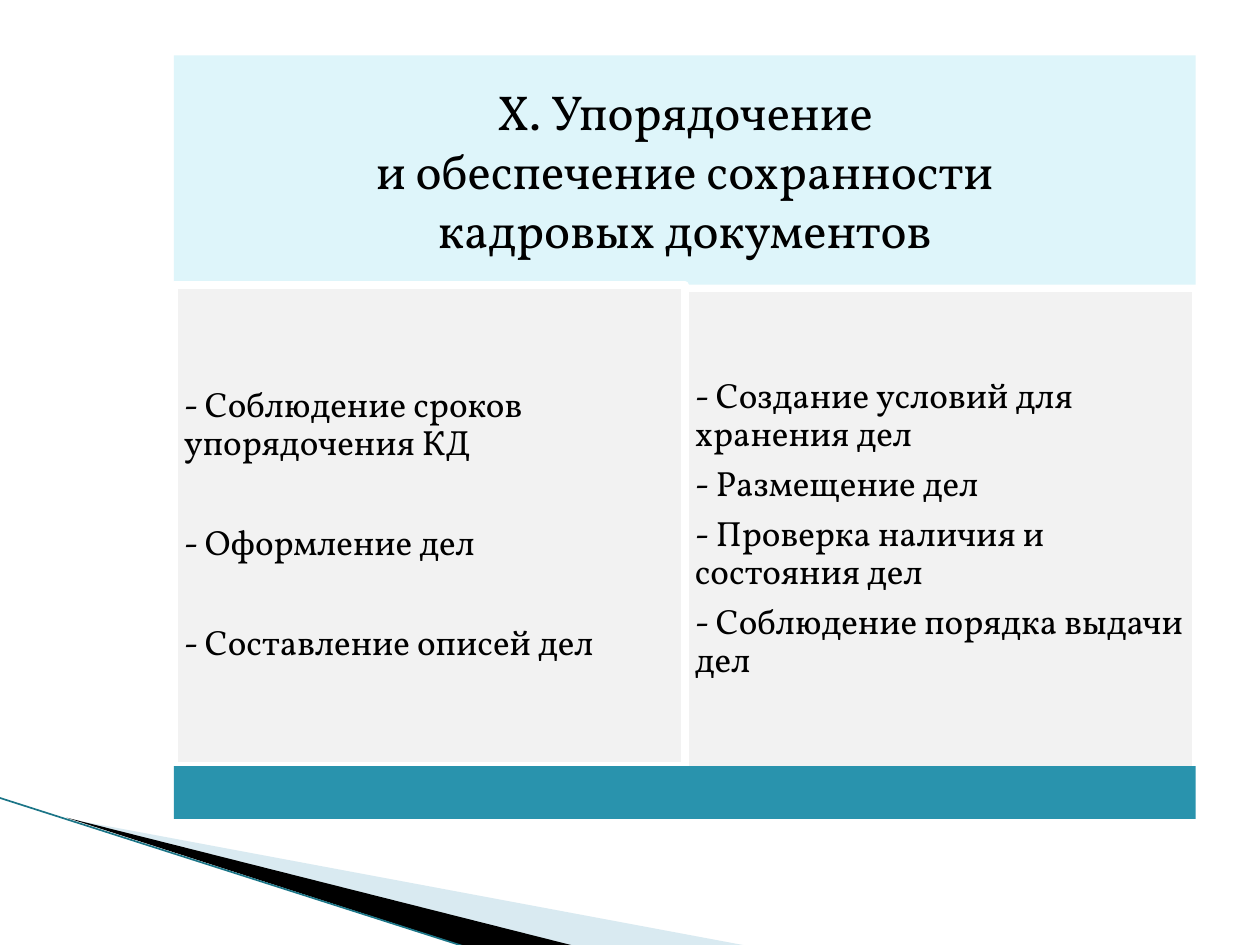
from lxml.etree import SubElement
from pptx import Presentation
from pptx.dml.color import RGBColor
from pptx.enum.shapes import MSO_CONNECTOR, MSO_SHAPE
from pptx.enum.text import MSO_ANCHOR, PP_ALIGN
from pptx.oxml.ns import qn
from pptx.util import Inches, Pt

COLORS = {
    "header": "DEF5FA",
    "panel": "F2F2F2",
    "footer": "2993AD",
    "white": "FFFFFF",
    "black": "000000",
    "wedge": "A0CBDC",
    "edge": "1B7587",
}
FONT = "Vollkorn"
LEFT, WIDTH = 1.38, 8.11
PANEL_W, PANEL_H = WIDTH / 2, 3.82

TITLE = ["Х. Упорядочение", "и обеспечение сохранности", "кадровых документов"]
ORDERING = [
    "- Соблюдение сроков упорядочения КД",
    "- Оформление дел",
    "- Составление описей дел",
]
STORAGE = [
    "- Создание условий для хранения дел",
    "- Размещение дел",
    "- Проверка наличия и состояния дел",
    "- Соблюдение порядка выдачи дел",
]


def rgb(name):
    return RGBColor.from_string(COLORS[name])


def paint(s, color, line=None):
    s.shadow.inherit = False
    s.fill.solid()
    s.fill.fore_color.rgb = rgb(color)
    if line:
        s.line.color.rgb = rgb(line)
        s.line.width = Pt(4.33)
    else:
        s.line.fill.background()


def add_box(slide, left, top, width, height, color, line=None):
    s = slide.shapes.add_shape(
        MSO_SHAPE.RECTANGLE, Inches(left), Inches(top), Inches(width), Inches(height)
    )
    paint(s, color, line)
    return s


def write(s, lines, size, inset, align=PP_ALIGN.LEFT, gap=0, spacing=1.0):
    tf = s.text_frame
    tf.word_wrap = True
    tf.vertical_anchor = MSO_ANCHOR.MIDDLE
    tf.margin_left = tf.margin_right = Inches(inset)
    tf.margin_top = tf.margin_bottom = Inches(inset)
    for i, line in enumerate(lines):
        p = tf.add_paragraph() if i else tf.paragraphs[0]
        p.alignment = align
        p.line_spacing = spacing
        p.space_before = Pt(gap if i else 0)
        r = p.add_run()
        r.text = line
        r.font.name = FONT
        r.font.size = Pt(size)
        r.font.color.rgb = rgb("black")


def add_panel(slide, left, top, lines, gap):
    s = add_box(slide, left, top, PANEL_W, PANEL_H, "panel", "white")
    write(s, lines, 20, 0.08, gap=gap, spacing=0.9)


def add_wedge(slide, points, color, alpha=None):
    start, *rest = [(Inches(x), Inches(y)) for x, y in points]
    builder = slide.shapes.build_freeform(*start)
    builder.add_line_segments(rest)
    s = builder.convert_to_shape()
    paint(s, color)
    if alpha:
        clr = s.fill._xPr.find(qn("a:solidFill"))[0]
        SubElement(clr, qn("a:alpha")).set("val", str(alpha * 1000))


def add_edge(slide, start, end):
    s = slide.shapes.add_connector(
        MSO_CONNECTOR.STRAIGHT, *[Inches(v) for v in (*start, *end)]
    )
    s.line.color.rgb = rgb("edge")
    s.line.width = Pt(0.95)
    SubElement(s._element.spPr, qn("a:effectLst"))


def main():
    prs = Presentation()
    prs.slide_width, prs.slide_height = Inches(10), Inches(7.5)
    slide = prs.slides.add_slide(prs.slide_layouts[6])

    add_wedge(slide, [(0.55, 6.5), (5.95, 7.51), (4.56, 7.51)], "wedge", 40)
    add_wedge(slide, [(0.53, 6.49), (4.57, 7.51), (3.72, 7.52)], "black")
    add_edge(slide, (-0.01, 6.33), (3.71, 7.52))

    header = add_box(slide, LEFT, 0.44, WIDTH, 1.82, "header")
    write(header, TITLE, 28, 0.12, PP_ALIGN.CENTER)
    add_panel(slide, LEFT, 2.26, ORDERING, gap=35.5)
    add_panel(slide, LEFT + PANEL_W, 2.29, STORAGE, gap=7)
    add_box(slide, LEFT, 6.08, WIDTH, 0.42, "footer")

    prs.save("out.pptx")


if __name__ == "__main__":
    main()
